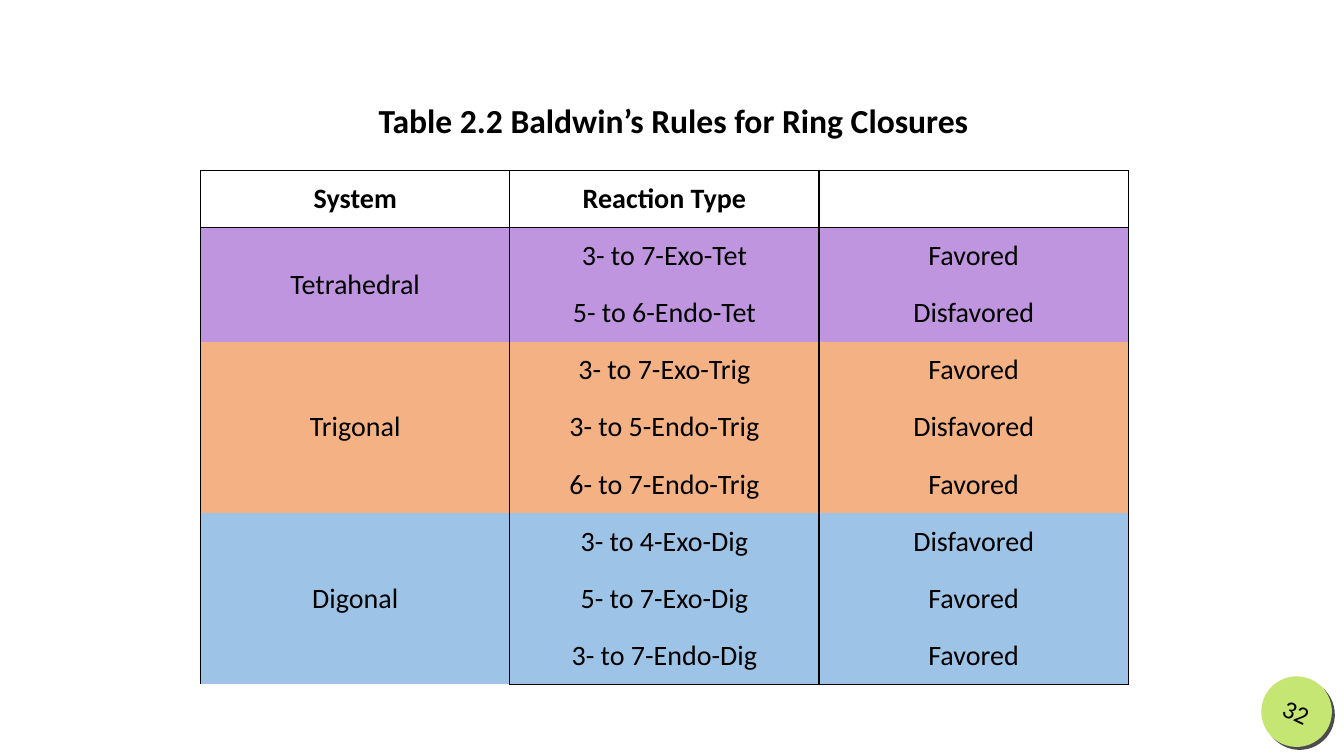
from lxml.etree import SubElement
from pptx import Presentation
from pptx.dml.color import RGBColor
from pptx.enum.shapes import MSO_SHAPE
from pptx.enum.text import MSO_ANCHOR as ANCHOR, PP_ALIGN as ALIGN
from pptx.oxml.ns import qn
from pptx.util import Pt

PX = 9144  # 100 px to the inch
BLACK = RGBColor(0x00, 0x00, 0x00)
PURPLE = RGBColor(0xBF, 0x95, 0xDF)
ORANGE = RGBColor(0xF4, 0xB1, 0x83)
BLUE = RGBColor(0x9D, 0xC3, 0xE6)
LIME = RGBColor(0xC5, 0xE6, 0x72)

HEADER = ("System", "Reaction Type", "")
SYSTEMS = [
    ("Tetrahedral", PURPLE, [("3- to 7-Exo-Tet", "Favored"),
                             ("5- to 6-Endo-Tet", "Disfavored")]),
    ("Trigonal", ORANGE, [("3- to 7-Exo-Trig", "Favored"),
                          ("3- to 5-Endo-Trig", "Disfavored"),
                          ("6- to 7-Endo-Trig", "Favored")]),
    ("Digonal", BLUE, [("3- to 4-Exo-Dig", "Disfavored"),
                       ("5- to 7-Exo-Dig", "Favored"),
                       ("3- to 7-Endo-Dig", "Favored")]),
]


class Deck:
    font = "Calibri"

    def __init__(self, width, height):
        self.prs = Presentation()
        self.prs.slide_width, self.prs.slide_height = width * PX, height * PX
        self.slide = self.prs.slides.add_slide(self.prs.slide_layouts[6])

    def label(self, tf, text, size, bold=False):
        p = tf.paragraphs[0]
        p.text = text
        p.alignment = ALIGN.CENTER
        p.font.name, p.font.size, p.font.bold = self.font, Pt(size), bold
        p.font.color.rgb = BLACK

    def title(self, text, *box):
        sp = self.slide.shapes.add_textbox(*(v * PX for v in box))
        sp.text_frame.word_wrap = True
        self.label(sp.text_frame, text, 24, bold=True)

    def badge(self, text, fill, *box, angle=0):
        sp = self.slide.shapes.add_shape(MSO_SHAPE.OVAL, *(v * PX for v in box))
        sp.rotation = angle
        sp.fill.solid()
        sp.fill.fore_color.rgb = fill
        sp.line.fill.background()
        sp.shadow.inherit = False
        effects = sp.element.spPr.find(qn("a:effectLst"))
        shadow = SubElement(effects, qn("a:outerShdw"), blurRad="0",
                            dist=str(Pt(3)), dir="2700000", rotWithShape="0")
        color = SubElement(shadow, qn("a:srgbClr"), val=str(BLACK))
        SubElement(color, qn("a:alpha"), val="70000")
        tf = sp.text_frame
        tf.margin_left = tf.margin_right = 0
        tf.vertical_anchor = ANCHOR.MIDDLE
        self.label(tf, text, 18)

    def borders(self, cell, sides):
        tc_pr = cell._tc.get_or_add_tcPr()
        for side in "LRTB":
            ln = SubElement(tc_pr, qn(f"a:ln{side}"), w=str(Pt(1)))
            if side in sides:
                fill = SubElement(ln, qn("a:solidFill"))
                SubElement(fill, qn("a:srgbClr"), val=str(BLACK))
            else:
                SubElement(ln, qn("a:noFill"))

    def cell(self, cell, text, sides, fill=None, bold=False):
        self.borders(cell, sides)
        if fill is None:
            cell.fill.background()
        else:
            cell.fill.solid()
            cell.fill.fore_color.rgb = fill
        cell.vertical_anchor = ANCHOR.MIDDLE
        self.label(cell.text_frame, text, 20, bold)

    def rules_table(self, header, systems, *box):
        last = sum(len(rules) for _, _, rules in systems)
        table = self.slide.shapes.add_table(
            last + 1, len(header), *(v * PX for v in box)).table
        for col, text in enumerate(header):
            self.cell(table.cell(0, col), text, "LRTB", bold=True)
        row = 1
        for system, fill, rules in systems:
            first = row
            for reaction, verdict in rules:
                sides = "LR" + "T" * (row == 1) + "B" * (row == last)
                name = system if row == first else ""
                for col, text in enumerate((name, reaction, verdict)):
                    self.cell(table.cell(row, col), text, sides, fill)
                row += 1
            table.cell(first, 0).merge(table.cell(row - 1, 0))


def main():
    deck = Deck(1333, 750)
    # Table of rules, one colour per system
    deck.rules_table(HEADER, SYSTEMS, 199, 169, 920, 510)
    # Title
    deck.title("Table 2.2 Baldwin’s Rules for Ring Closures", 314, 94, 708, 50)
    # Slide number
    deck.badge("32", LIME, 1251, 671, 70, 70, angle=25)
    deck.prs.save("out.pptx")


if __name__ == "__main__":
    main()
